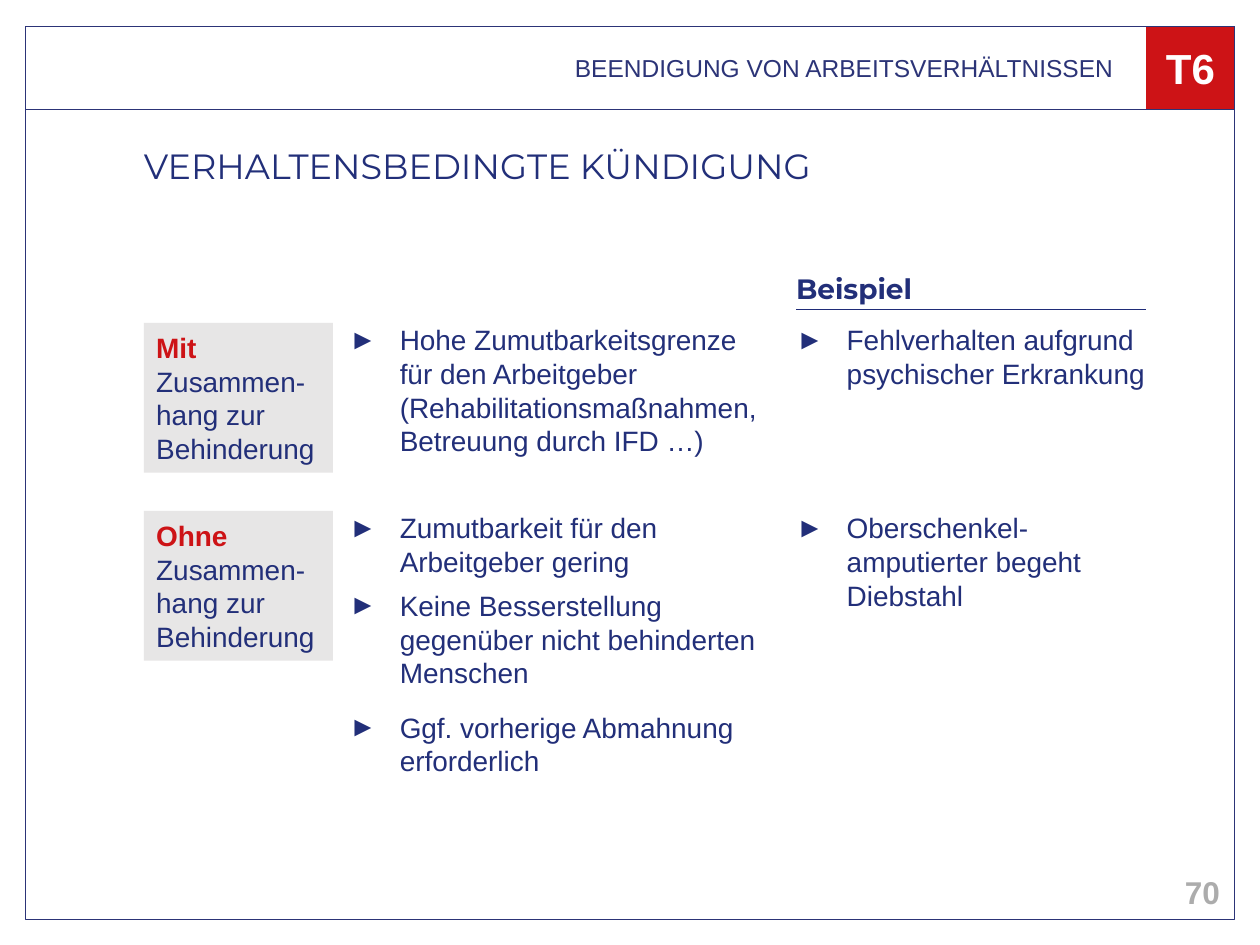
from lxml import etree
from pptx import Presentation
from pptx.dml.color import RGBColor
from pptx.enum.shapes import MSO_CONNECTOR, MSO_SHAPE
from pptx.enum.text import MSO_ANCHOR, PP_ALIGN
from pptx.oxml.ns import qn
from pptx.util import Cm, Pt

RECTANGLE = MSO_SHAPE.RECTANGLE
STRAIGHT = MSO_CONNECTOR.STRAIGHT
TOP, MIDDLE = MSO_ANCHOR.TOP, MSO_ANCHOR.MIDDLE
LEFT, CENTER, RIGHT = PP_ALIGN.LEFT, PP_ALIGN.CENTER, PP_ALIGN.RIGHT

NAVY, FRAME_BLUE, RULE_BLUE = "222F79", "2C3477", "1F2C78"
RED, WHITE, PALE, GRAY = "CD1316", "FFFFFF", "E7E6E6", "ACACAC"
BODY = {"name": "Arial", "size": Pt(16), "bold": False, "color": NAVY}
INSET = (0.25, 0.13, 0.25, 0.13)

ROWS = [
    ("Mit",
     [("Hohe Zumutbarkeitsgrenze für den Arbeitgeber\n"
       "(Rehabilitationsmaßnahmen, Betreuung durch IFD …)", 0)],
     [("Fehlverhalten aufgrund psychischer Erkrankung", 0)]),
    ("Ohne",
     [("Zumutbarkeit für den Arbeitgeber gering", 0),
      ("Keine Besserstellung gegenüber nicht behinderten Menschen", 6),
      ("Ggf. vorherige Abmahnung erforderlich", 12)],
     [("Oberschenkel-amputierter begeht Diebstahl", 0)]),
]


def color(value):
    return RGBColor.from_string(value)


def apply_format(target, values):
    for name, value in values.items():
        if name == "color":
            target.color.rgb = color(value)
        else:
            setattr(target, name, value)


def add_spans(para, text, values):
    for index, line in enumerate(text.split("\n")):
        if index:
            para.add_line_break()
        span = para.add_run()
        span.text = line
        apply_format(span.font, {**BODY, **values})


def set_frame(box, anchor=TOP, insets=(0, 0, 0, 0)):
    frame = box.text_frame
    sides = ("margin_left", "margin_top", "margin_right", "margin_bottom")
    margins = {side: Cm(inset) for side, inset in zip(sides, insets)}
    apply_format(frame, {"word_wrap": True, "vertical_anchor": anchor, **margins})
    return frame


def add_text(page, area, text, values, align=LEFT, anchor=TOP, insets=(0, 0, 0, 0), spacing=1.0):
    box = page.shapes.add_textbox(*map(Cm, area))
    para = set_frame(box, anchor, insets).paragraphs[0]
    apply_format(para, {"alignment": align, "line_spacing": spacing})
    add_spans(para, text, values)


def add_box(page, area, fill=None, line=None):
    box = page.shapes.add_shape(RECTANGLE, *map(Cm, area))
    box.shadow.inherit = False
    if fill:
        box.fill.solid()
        box.fill.fore_color.rgb = color(fill)
    else:
        box.fill.background()
    if line:
        box.line.color.rgb = color(line)
        box.line.width = Pt(0.25)
    else:
        box.line.fill.background()
    return box


def add_bullet(para):
    properties = para._p.get_or_add_pPr()
    properties.set("marL", str(Cm(1.02)))
    properties.set("indent", str(-Cm(1.02)))
    bullet_color = etree.SubElement(properties, qn("a:buClr"))
    etree.SubElement(bullet_color, qn("a:srgbClr"), val=NAVY)
    etree.SubElement(properties, qn("a:buFont"), typeface="Arial")
    etree.SubElement(properties, qn("a:buChar"), char="►")


def add_bullets(page, area, items):
    box = page.shapes.add_textbox(*map(Cm, area))
    frame = set_frame(box)
    for index, (text, space) in enumerate(items):
        para = frame.add_paragraph() if index else frame.paragraphs[0]
        add_bullet(para)
        para.space_before = Pt(space)
        add_spans(para, text, {})


def add_label(page, area, keyword):
    box = add_box(page, area, PALE)
    para = set_frame(box, MIDDLE, INSET).paragraphs[0]
    para.alignment = LEFT
    add_spans(para, keyword, {"bold": True, "color": RED})
    add_spans(para, " Zusammen-hang zur Behinderung", {})


def add_page_frame(page, left, top, width, height):
    bar, badge = 1.68, 1.78
    badge_left = left + width - badge
    badge_area = (badge_left, top, badge, bar)
    add_box(page, badge_area, RED, RED)
    add_box(page, (left, top, width, bar), line=FRAME_BLUE)
    add_box(page, (left, top, width, height), line=FRAME_BLUE)
    add_text(page, (left, top, width - badge, bar), "BEENDIGUNG VON ARBEITSVERHÄLTNISSEN",
             {"size": Pt(14), "color": FRAME_BLUE}, RIGHT, MIDDLE, (0, 0, 0.66, 0))
    add_text(page, badge_area, "T6", {"size": Pt(24), "bold": True, "color": WHITE}, CENTER, MIDDLE)
    add_text(page, (left + width - 5.77, top + height - 1.06, 5.72, 1.02), "70",
             {"size": Pt(18), "bold": True, "color": GRAY}, RIGHT, MIDDLE, INSET)


def add_example_heading(page, left, top, width):
    rule_top = top + 0.97
    rule = page.shapes.add_connector(STRAIGHT, *map(Cm, (left, rule_top, left + width, rule_top)))
    rule.line.color.rgb = color(RULE_BLUE)
    rule.line.width = Pt(0.75)
    etree.SubElement(rule._element.spPr, qn("a:effectLst"))
    add_text(page, (left, top, width, 0.81), "Beispiel",
             {"name": "Montserrat", "bold": True}, spacing=1.3)


def add_comparison(page, left, top):
    points_left, example_left = left + 4.14, left + 13.15
    add_example_heading(page, example_left, top, 7.06)
    for index, (keyword, points, examples) in enumerate(ROWS):
        row_top = top + 1.24 + index * 3.79
        add_label(page, (left, row_top, 3.81, 3.02), keyword)
        add_bullets(page, (points_left, row_top, 8.28, 3.02), points)
        add_bullets(page, (example_left, row_top, 7.06, 3.02), examples)


def main():
    deck = Presentation()
    deck.slide_width, deck.slide_height = Cm(25.4), Cm(19.05)
    page = deck.slides.add_slide(deck.slide_layouts[6])
    add_page_frame(page, 0.51, 0.53, 24.38, 18)
    add_text(page, (2.9, 3, 19.38, 1.68), "VERHALTENSBEDINGTE KÜNDIGUNG",
             {"name": "Montserrat", "size": Pt(20)}, spacing=0.9)
    add_comparison(page, 2.9, 5.27)
    deck.save("out.pptx")


if __name__ == "__main__":
    main()
